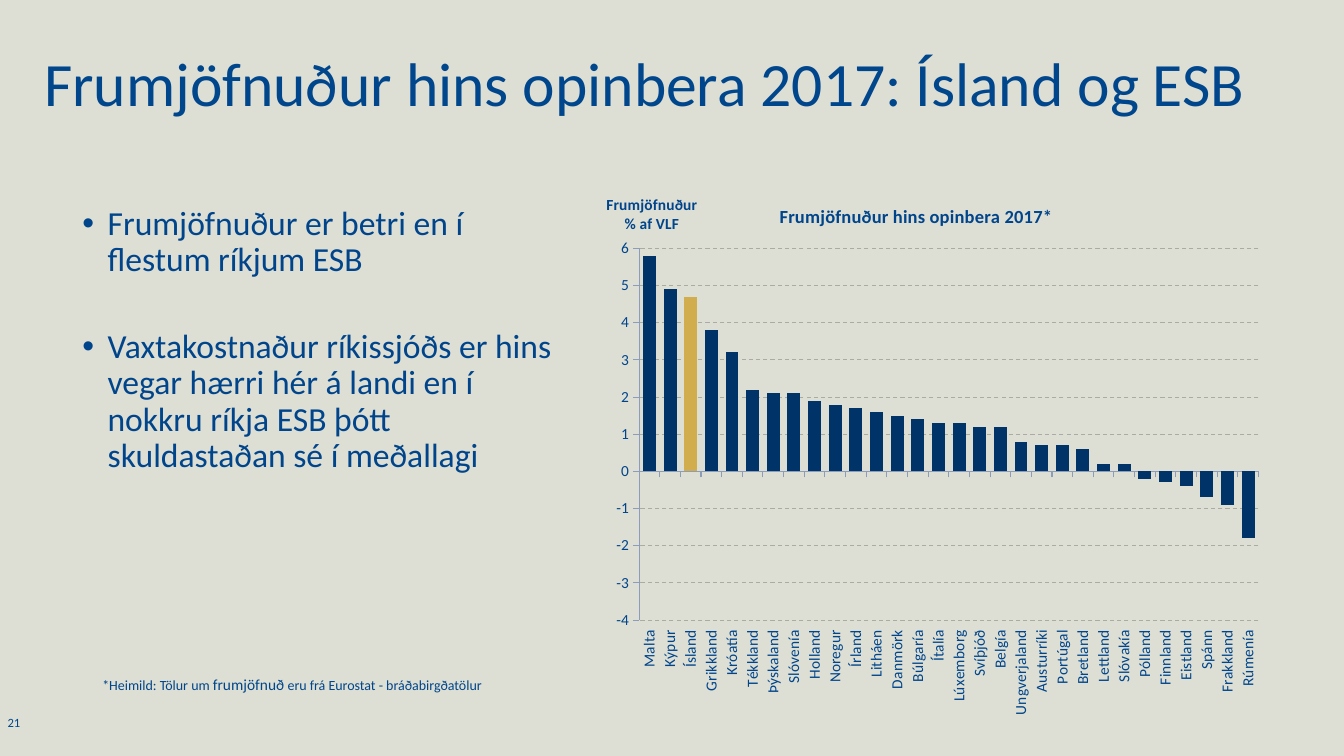
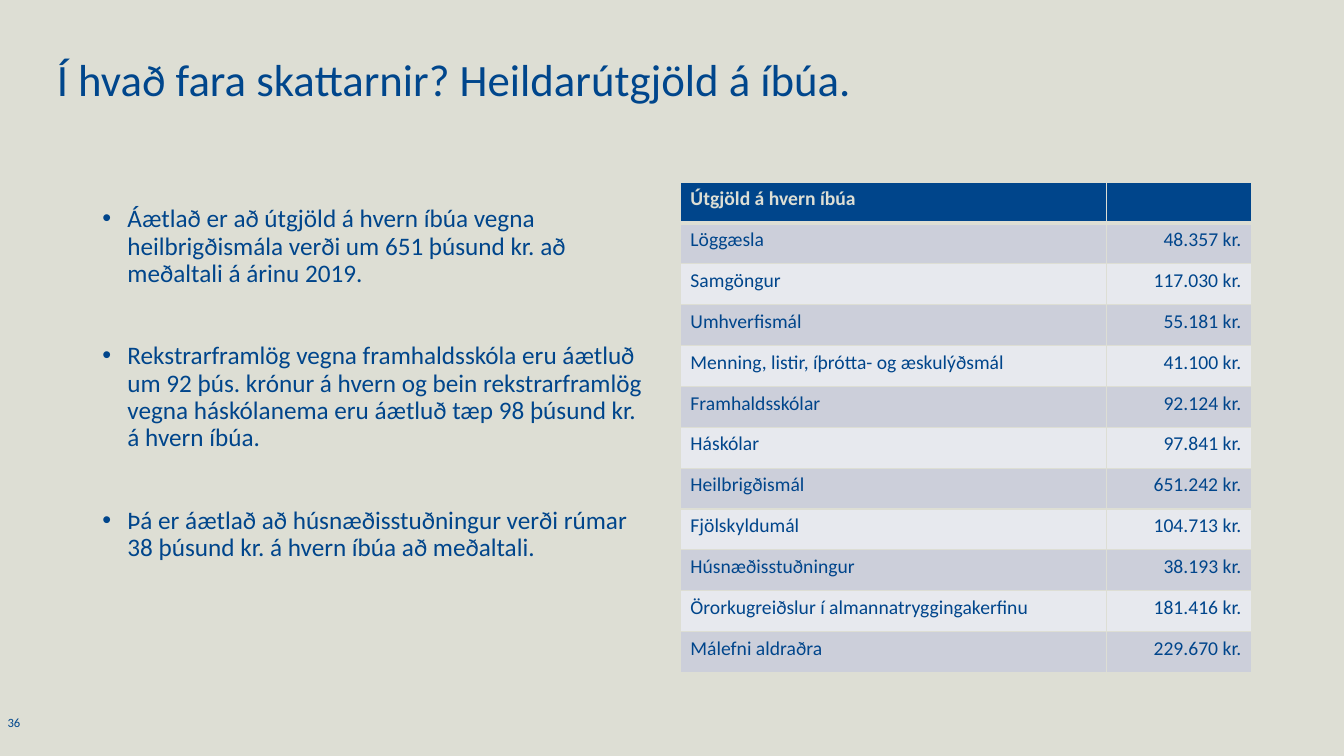
from dataclasses import dataclass
from typing import NamedTuple

from lxml.etree import SubElement as Sub
from pptx import Presentation
from pptx.chart.data import CategoryChartData as Data
from pptx.dml.color import RGBColor as Rgb
from pptx.enum.chart import XL_CHART_TYPE as Kind
from pptx.enum.chart import XL_TICK_LABEL_POSITION as Label
from pptx.enum.chart import XL_TICK_MARK as Tick
from pptx.enum.dml import MSO_LINE as Dash
from pptx.enum.text import PP_ALIGN as Align
from pptx.oxml.ns import qn
from pptx.util import Pt

FONT = "Calibri"
HEX = {
    "paper": "DDDED4",
    "title": "00468C",
    "text": "00458B",
    "bar": "003468",
    "gold": "D1AD4E",
    "grid": "ABAAA5",
    "axis": "8C9DBB",
    "dark": "CCCFDA",
    "light": "E7E9EE",
}


class Box(NamedTuple):
    left: float
    top: float
    width: float
    height: float

    def pts(self) -> list:
        return [Pt(side) for side in self]


class Run(NamedTuple):
    text: str
    size: float
    tint: str = "text"
    bold: bool = False


@dataclass
class Page:
    number: str
    title: Run
    head: Box
    body: Box
    points: list
    size: float
    indent: float
    gap: float


class Land(NamedTuple):
    name: str
    value: float


class Cost(NamedTuple):
    name: str
    sum: str


GRAPH = Box(430.5, 129.5, 474.5, 381.5)
PLOT = Box(26, 48, 442.5, 265.5)

PAGES = [
    Page("21", Run("Frumjöfnuður hins opinbera 2017: Ísland og ESB", 44, "title"),
         Box(24.5, 34.5, 894, 65), Box(15.8, 144, 389, 304.5),
         ["Frumjöfnuður er betri en í flestum ríkjum ESB",
          "Vaxtakostnaður ríkissjóðs er hins vegar hærri hér á landi en í nokkru "
          "ríkja ESB þótt skuldastaðan sé í meðallagi"],
         24, 54, 36),
    Page("36", Run("Í hvað fara skattarnir? Heildarútgjöld á íbúa.", 32, "title"),
         Box(33.5, 38, 828, 55), Box(66, 143.7, 404, 342.5),
         ["Áætlað er að útgjöld á hvern íbúa vegna heilbrigðismála verði um 651 "
          "þúsund kr. að meðaltali á árinu 2019.",
          "Rekstrarframlög vegna framhaldsskóla eru áætluð um 92 þús. krónur á "
          "hvern og bein rekstrarframlög vegna háskólanema eru áætluð tæp 98 "
          "þúsund kr. á hvern íbúa.",
          "Þá er áætlað að húsnæðisstuðningur verði rúmar 38 þúsund kr. á hvern "
          "íbúa að meðaltali."],
         18, 18, 39.5),
]

LANDS = [
    Land("Malta", 5.8), Land("Kýpur", 4.9), Land("Ísland", 4.7),
    Land("Grikkland", 3.8), Land("Króatía", 3.2), Land("Tékkland", 2.2),
    Land("Þýskaland", 2.1), Land("Slóvenía", 2.1), Land("Holland", 1.9),
    Land("Noregur", 1.8), Land("Írland", 1.7), Land("Litháen", 1.6),
    Land("Danmörk", 1.5), Land("Búlgaría", 1.4), Land("Ítalía", 1.3),
    Land("Lúxemborg", 1.3), Land("Svíþjóð", 1.2), Land("Belgía", 1.2),
    Land("Ungverjaland", 0.8), Land("Austurríki", 0.7), Land("Portúgal", 0.7),
    Land("Bretland", 0.6), Land("Lettland", 0.2), Land("Slóvakía", 0.2),
    Land("Pólland", -0.2), Land("Finnland", -0.3), Land("Eistland", -0.4),
    Land("Spánn", -0.7), Land("Frakkland", -0.9), Land("Rúmenía", -1.8),
]

COSTS = [
    Cost("Útgjöld á hvern íbúa", ""),
    Cost("Löggæsla", "48.357 kr."),
    Cost("Samgöngur", "117.030 kr."),
    Cost("Umhverfismál", "55.181 kr."),
    Cost("Menning, listir, íþrótta- og æskulýðsmál", "41.100 kr."),
    Cost("Framhaldsskólar", "92.124 kr."),
    Cost("Háskólar", "97.841 kr."),
    Cost("Heilbrigðismál", "651.242 kr."),
    Cost("Fjölskyldumál", "104.713 kr."),
    Cost("Húsnæðisstuðningur", "38.193 kr."),
    Cost("Örorkugreiðslur í almannatryggingakerfinu", "181.416 kr."),
    Cost("Málefni aldraðra", "229.670 kr."),
]

NOTE = [
    Run("*Heimild: Tölur um ", 10),
    Run("frumjöfnuð", 11),
    Run(" eru frá Eurostat - bráðabirgðatölur", 10),
]


def color(name: str) -> Rgb:
    return Rgb.from_string(HEX[name])


def paint(fill, name: str) -> None:
    fill.solid()
    fill.fore_color.rgb = color(name)


def style(font, size: float, tint: str = "text", bold: bool = False) -> None:
    font.name, font.size, font.bold = FONT, Pt(size), bold
    font.color.rgb = color(tint)


def write(para, runs: list) -> None:
    for item in runs:
        run = para.add_run()
        run.text = item.text
        style(run.font, item.size, item.tint, item.bold)


def frame(slide, box: Box):
    text = slide.shapes.add_textbox(*box.pts()).text_frame
    text.word_wrap = True
    return text


def bullet(para, indent: float) -> None:
    props = para._p.get_or_add_pPr()
    props.set("marL", str(Pt(indent)))
    props.set("indent", str(-Pt(18)))
    Sub(props, qn("a:buFont")).set("typeface", "Arial")
    Sub(props, qn("a:buChar")).set("char", "•")


def start(deck, page: Page):
    slide = deck.slides.add_slide(deck.slide_layouts[6])
    paint(slide.background.fill, "paper")
    foot = frame(slide, Box(0, 510.5, 20, 18.5))
    foot.margin_left = foot.margin_right = foot.margin_top = foot.margin_bottom = 0
    foot.paragraphs[0].alignment = Align.CENTER
    write(foot.paragraphs[0], [Run(page.number, 9, "title")])
    head = frame(slide, page.head).paragraphs[0]
    head.line_spacing = 0.9
    write(head, [page.title])
    body = frame(slide, page.body)
    for i, point in enumerate(page.points):
        para = body.add_paragraph() if i else body.paragraphs[0]
        bullet(para, page.indent)
        para.line_spacing = 0.9
        if i:
            para.space_before = Pt(page.gap)
        write(para, [Run(point, page.size)])
    return slide


def layout(node, spot: int, **rules) -> None:
    for old in node.findall(qn("c:layout")):
        node.remove(old)
    outer = Sub(node, qn("c:layout"))
    node.insert(spot, outer)
    inner = Sub(outer, qn("c:manualLayout"))
    for key, val in rules.items():
        Sub(inner, qn(f"c:{key}")).set("val", str(val))


def turn(node, angle: int) -> None:
    for props in node.iter(qn("a:bodyPr")):
        props.set("rot", str(angle * 60000))
        props.set("vert", "horz")


def caption(title, lines: list, size: float, left: float, top: float) -> None:
    text = title.text_frame
    for i, line in enumerate(lines):
        para = text.add_paragraph() if i else text.paragraphs[0]
        para.alignment = Align.CENTER
        write(para, [Run(line, size, bold=True)])
    turn(title.element, 0)
    layout(title.element, 1, xMode="edge", yMode="edge",
           x=left / GRAPH.width, y=top / GRAPH.height)


def graph(slide) -> None:
    data = Data()
    data.categories = [land.name for land in LANDS]
    data.add_series("Series 1", [land.value for land in LANDS])
    chart = slide.shapes.add_chart(Kind.COLUMN_CLUSTERED, *GRAPH.pts(), data).chart
    chart.has_legend = False
    style(chart.font, 11)
    caption(chart.chart_title, ["Frumjöfnuður hins opinbera 2017*"], 13.2, 124, 13.5)
    plot = chart.plots[0]
    plot.gap_width = 60
    plot.vary_by_categories = False
    bars = plot.series[0]
    bars.invert_if_negative = False
    paint(bars.format.fill, "bar")
    paint(bars.points[2].format.fill, "gold")
    cats, vals = chart.category_axis, chart.value_axis
    for axis in (cats, vals):
        axis.major_tick_mark = Tick.OUTSIDE
        axis.minor_tick_mark = Tick.NONE
        axis.format.line.color.rgb = color("axis")
        axis.format.line.width = Pt(0.75)
        style(axis.tick_labels.font, 11)
    cats.tick_label_position = Label.LOW
    turn(chart.element.find(".//" + qn("c:catAx")), -90)
    vals.minimum_scale, vals.maximum_scale, vals.major_unit = -4, 6, 1
    caption(vals.axis_title, ["Frumjöfnuður", "% af VLF"], 11, 0.5, 7)
    grid = vals.major_gridlines.format.line
    grid.color.rgb = color("grid")
    grid.width = Pt(0.75)
    grid.dash_style = Dash.DASH
    area = chart.element.find(".//" + qn("c:plotArea"))
    layout(area, 0, layoutTarget="inner", xMode="edge", yMode="edge",
           x=PLOT.left / GRAPH.width, y=PLOT.top / GRAPH.height,
           w=PLOT.width / GRAPH.width, h=PLOT.height / GRAPH.height)


def edge(cell, low: float) -> None:
    props = cell._tc.get_or_add_tcPr()
    for i, side in enumerate(("lnL", "lnR", "lnT", "lnB")):
        line = Sub(props, qn(f"a:{side}"))
        line.set("w", str(Pt(low if side == "lnB" else 1)))
        fill = Sub(line, qn("a:solidFill"))
        Sub(fill, qn("a:srgbClr")).set("val", HEX["paper"])
        props.insert(i, line)


def table(slide, box: Box) -> None:
    grid = slide.shapes.add_table(len(COSTS), 2, *box.pts()).table
    for col, width in zip(grid.columns, (304.5, 103.5)):
        col.width = Pt(width)
    for i, cost in enumerate(COSTS):
        grid.rows[i].height = Pt(box.height / len(COSTS))
        shade = ("dark" if i % 2 else "light") if i else "text"
        for j, text in enumerate(cost):
            cell = grid.cell(i, j)
            paint(cell.fill, shade)
            edge(cell, 1 if i else 3)
            para = cell.text_frame.paragraphs[0]
            para.alignment = Align.RIGHT if j else Align.LEFT
            if text:
                write(para, [Run(text, 14, "text" if i else "paper", not i)])


def main() -> None:
    deck = Presentation()
    deck.slide_width, deck.slide_height = Pt(960), Pt(540)
    first, last = [start(deck, page) for page in PAGES]
    graph(first)
    write(frame(first, Box(66, 478.5, 339, 21)).paragraphs[0], NOTE)
    table(last, Box(486, 130, 408, 350.4))
    deck.save("out.pptx")


if __name__ == "__main__":
    main()
